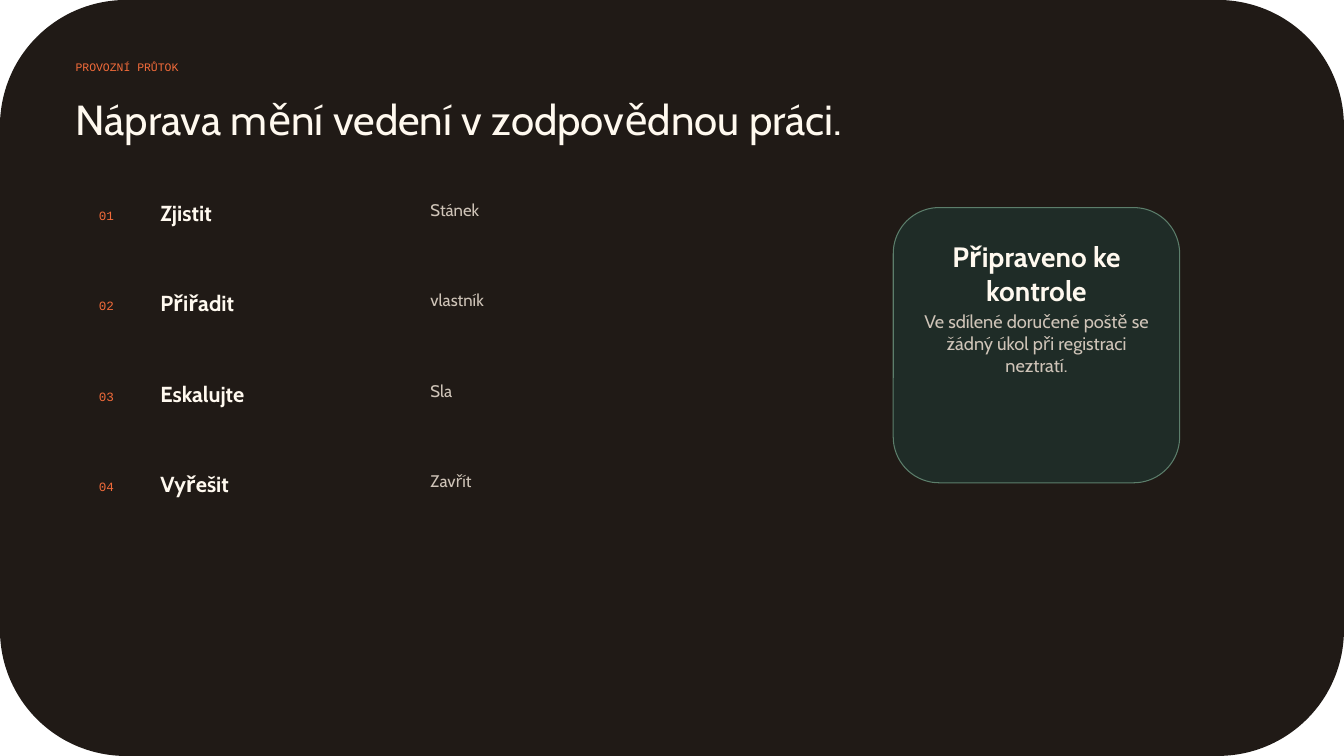
"""Build the operations-flow slide with its four steps and a review card."""
from dataclasses import dataclass

from pptx import Presentation
from pptx import util as u
from pptx.dml.color import RGBColor
from pptx.enum import shapes, text

COLORS = {
    "ground": "201A16",
    "accent": "F26B3A",
    "bright": "FFF9EF",
    "muted": "CFC4B8",
    "card": "1F2C27",
    "edge": "5C7E6B",
}
SANS, MONO = "Cabin", "Courier New"
STEP_TOP, STEP_PITCH = 1.98, 0.897


@dataclass
class Box:
    left: float
    top: float
    width: float
    height: float

    def lengths(self):
        return [u.Inches(v) for v in (self.left, self.top, self.width, self.height)]


@dataclass
class Step:
    name: str
    detail: str


STEPS = [
    Step("Zjistit", "Stánek"),
    Step("Přiřadit", "vlastník"),
    Step("Eskalujte", "Sla"),
    Step("Vyřešit", "Zavřít"),
]


def rgb(name: str) -> RGBColor:
    return RGBColor.from_string(COLORS[name])


def add_text(s, box: Box, words: str, *, size: float, color: str = "bright",
             font: str = SANS, bold: bool = False, center: bool = False, sp=None) -> None:
    if sp is None:
        sp = s.shapes.add_textbox(*box.lengths())
    else:
        sp.left, sp.top, sp.width, sp.height = box.lengths()
    tf = sp.text_frame
    tf.word_wrap = True
    tf.auto_size = text.MSO_AUTO_SIZE.NONE
    tf.vertical_anchor = text.MSO_ANCHOR.TOP
    tf.margin_left = tf.margin_top = tf.margin_right = tf.margin_bottom = 0
    p = tf.paragraphs[0]
    p.alignment = text.PP_ALIGN.CENTER if center else text.PP_ALIGN.LEFT
    r = p.add_run()
    r.text = words
    r.font.name, r.font.size, r.font.bold = font, u.Pt(size), bold
    r.font.color.rgb = rgb(color)


def add_panel(s, box: Box, fill: str, edge: str = ""):
    sp = s.shapes.add_shape(shapes.MSO_SHAPE.ROUNDED_RECTANGLE, *box.lengths())
    sp.shadow.inherit = False
    sp.fill.solid()
    sp.fill.fore_color.rgb = rgb(fill)
    if edge:
        sp.line.color.rgb = rgb(edge)
        sp.line.width = u.Pt(0.75)
    else:
        sp.line.fill.background()
    return sp


def add_step(s, index: int, step: Step) -> None:
    top = STEP_TOP + index * STEP_PITCH
    add_text(s, Box(0.98, top + 0.08, 0.55, 0.24), f"{index + 1:02}",
             size=9, color="accent", font=MONO)
    add_text(s, Box(1.59, top, 2.84, 0.28), step.name, size=15.5, bold=True)
    add_text(s, Box(4.27, top, 3.94, 0.31), step.detail, size=12, color="muted")


def main() -> None:
    prs = Presentation()
    prs.slide_width, prs.slide_height = u.Inches(13.33), u.Inches(7.5)
    s = prs.slides.add_slide(prs.slide_layouts[5])
    title = s.shapes.title

    ground = add_panel(s, Box(0, 0, 13.33, 7.5), "ground")
    title.element.addprevious(ground.element)
    add_text(s, Box(0.75, 0.6, 4.59, 0.28), "PROVOZNÍ PRŮTOK",
             size=8.2, color="accent", font=MONO)
    add_text(s, Box(0.75, 0.93, 9.41, 0.71),
             "Náprava mění vedení v zodpovědnou práci.", size=30, sp=title)

    for index, step in enumerate(STEPS):
        add_step(s, index, step)

    add_panel(s, Box(8.86, 2.06, 2.84, 2.73), "card", "edge")
    add_text(s, Box(9.13, 2.38, 2.3, 0.46), "Připraveno ke kontrole",
             size=20, bold=True, center=True)
    add_text(s, Box(9.13, 3.08, 2.3, 0.98),
             "Ve sdílené doručené poště se žádný úkol při registraci neztratí.",
             size=13, color="muted", center=True)
    prs.save("out.pptx")


if __name__ == "__main__":
    main()
